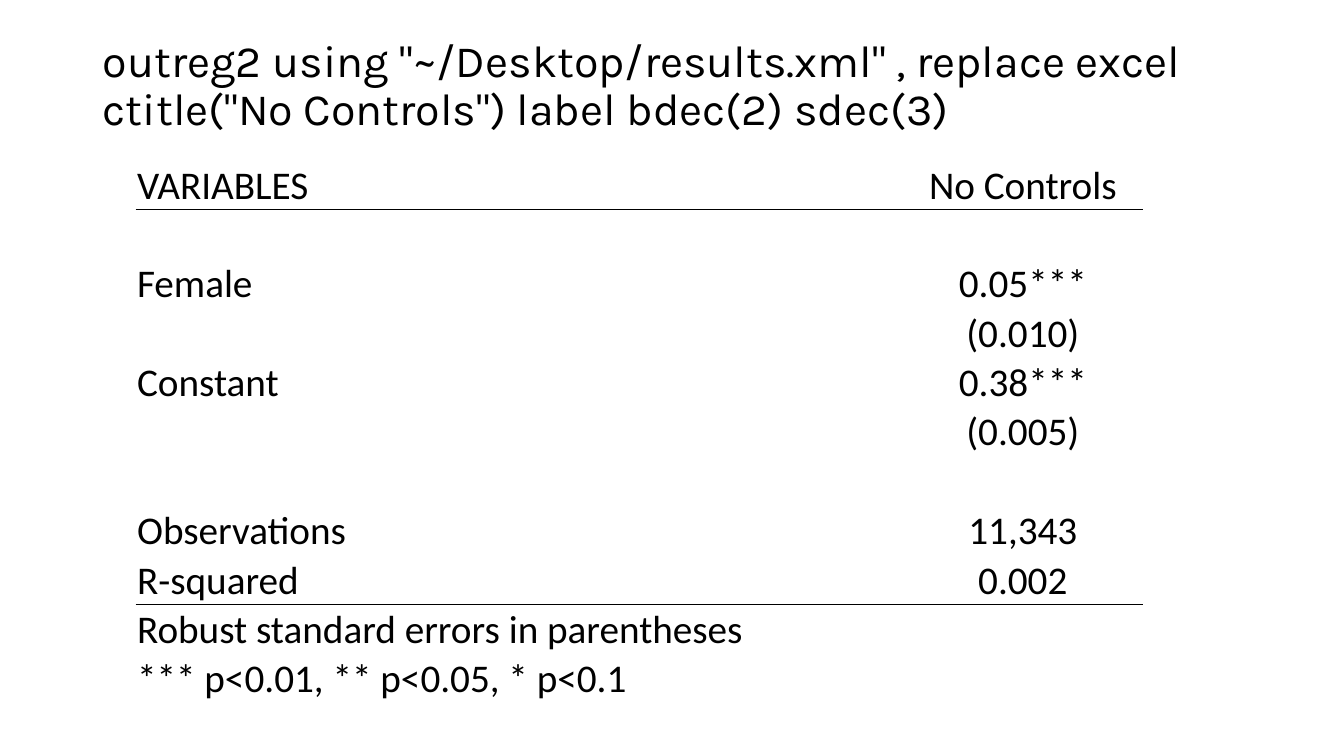
from dataclasses import dataclass

from lxml.etree import SubElement
from pptx import Presentation
from pptx.dml.color import RGBColor
from pptx.enum.text import MSO_ANCHOR, MSO_AUTO_SIZE, PP_ALIGN
from pptx.oxml.ns import qn
from pptx.util import Emu, Pt

LEFT, CENTER = PP_ALIGN.LEFT, PP_ALIGN.CENTER
MIDDLE, BOTTOM = MSO_ANCHOR.MIDDLE, MSO_ANCHOR.BOTTOM
NO_FIT = MSO_AUTO_SIZE.NONE
TITLE_ONLY = 5
SCALE = 9144  # EMU in one px, 100 px to the inch


@dataclass(frozen=True)
class Theme:
    ink: str = "000000"
    head_font: str = "Karla"
    body_font: str = "Calibri"
    head_size: int = 32
    body_size: int = 28
    rule: float = 0.5


THEME = Theme()
COMMAND = ('outreg2 using "~/Desktop/results.xml" , replace excel '
           'ctitle("No Controls") label bdec(2) sdec(3)')
RESULTS = [
    ("VARIABLES", "No Controls"),
    ("", ""),
    ("Female", "0.05***"),
    ("", "(0.010)"),
    ("Constant", "0.38***"),
    ("", "(0.005)"),
    ("", ""),
    ("Observations", "11,343"),
    ("R-squared", "0.002"),
    ("Robust standard errors in parentheses", ""),
    ("*** p<0.01, ** p<0.05, * p<0.1", ""),
]
RULED = (0, 8)  # rows with a line below
COLS = (761, 237)
ROW = 49


def px(num):
    return Emu(num * SCALE)


def write(frame, text, font=THEME.body_font, size=THEME.body_size,
          align=LEFT, spacing=None):
    para = frame.paragraphs[0]
    para.alignment = align
    para.line_spacing = spacing
    run = para.add_run()
    run.text = text
    run.font.name = font
    run.font.size = Pt(size)
    run.font.color.rgb = RGBColor.from_string(THEME.ink)


def add_title(slide, text):
    title = slide.shapes.title
    title.left, title.top = px(92), px(14)
    title.width, title.height = px(1150), px(145)
    frame = title.text_frame
    frame.word_wrap = True
    frame.auto_size = NO_FIT
    frame.vertical_anchor = MIDDLE
    write(frame, text, font=THEME.head_font, size=THEME.head_size, spacing=0.9)


def rule_edge(cell, side):
    """Draw a thin line on one side of a cell: lnT or lnB."""
    line = SubElement(cell._tc.get_or_add_tcPr(), qn(f"a:{side}"),
                      w=str(Pt(THEME.rule)))
    fill = SubElement(line, qn("a:solidFill"))
    SubElement(fill, qn("a:srgbClr"), val=THEME.ink)


def style_cell(cell, row):
    if row - 1 in RULED:
        rule_edge(cell, "lnT")
    if row in RULED:
        rule_edge(cell, "lnB")
    cell.fill.background()
    cell.vertical_anchor = BOTTOM
    cell.margin_left = cell.margin_right = cell.margin_top = px(1)
    cell.margin_bottom = 0


def add_results(slide):
    count = len(RESULTS)
    table = slide.shapes.add_table(count, len(COLS), px(135), px(159),
                                   px(sum(COLS)), px(ROW * count)).table
    table.first_row = table.horz_banding = False
    for col, width in zip(table.columns, COLS):
        col.width = px(width)
    for i, texts in enumerate(RESULTS):
        table.rows[i].height = px(ROW)
        for j, text in enumerate(texts):
            cell = table.cell(i, j)
            style_cell(cell, i)
            if text:
                write(cell.text_frame, text, align=CENTER if j else LEFT)


def main():
    deck = Presentation()
    deck.slide_width, deck.slide_height = px(1333), px(750)
    slide = deck.slides.add_slide(deck.slide_layouts[TITLE_ONLY])
    add_title(slide, COMMAND)
    add_results(slide)
    deck.save("out.pptx")


if __name__ == "__main__":
    main()
